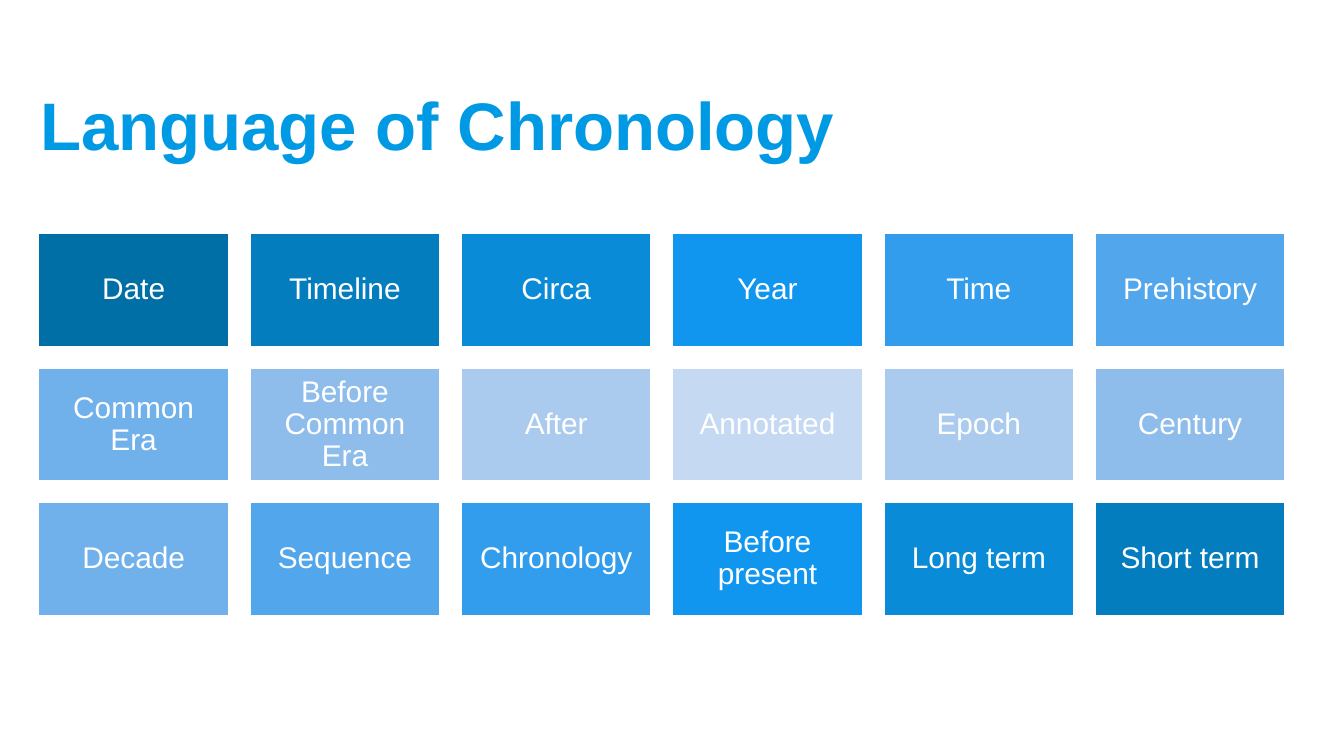
from pptx import Presentation
from pptx.dml.color import RGBColor
from pptx.enum.shapes import MSO_SHAPE
from pptx.enum.text import MSO_ANCHOR, PP_ALIGN
from pptx.util import Inches, Pt

RECTANGLE = MSO_SHAPE.RECTANGLE
MIDDLE = MSO_ANCHOR.MIDDLE
LEFT = PP_ALIGN.LEFT
CENTER = PP_ALIGN.CENTER

COLORS = {
    "title": "0099E3",
    "white": "FFFFFF",
    "shade_0": "006FA5",
    "shade_1": "047DBF",
    "shade_2": "098BD8",
    "shade_3": "1196EF",
    "shade_4": "329DEC",
    "shade_5": "52A6EB",
    "shade_6": "71B1EB",
    "shade_7": "8EBDEC",
    "shade_8": "AACBEE",
    "shade_9": "C5D9F2",
}
TERMS = [
    "Date", "Timeline", "Circa", "Year", "Time", "Prehistory",
    "Common Era", "Before Common Era", "After", "Annotated", "Epoch", "Century",
    "Decade", "Sequence", "Chronology", "Before present", "Long term", "Short term",
]
COLUMNS = 6
FIRST_LEFT, LAST_LEFT = 0.28, 8.14
PITCH = (LAST_LEFT - FIRST_LEFT) / (COLUMNS - 1)
TITLE_FONT = {"name": "Arial", "size": Pt(36), "bold": True}
TERM_FONT = {"name": "Arial", "size": Pt(16), "bold": False}
TITLE_PARAGRAPH = {"alignment": LEFT}
TERM_PARAGRAPH = {"alignment": CENTER, "line_spacing": 0.9}
TITLE_FRAME = {"word_wrap": True, "vertical_anchor": MIDDLE}
MARGINS = ("margin_left", "margin_top", "margin_right", "margin_bottom")
TERM_FRAME = {**TITLE_FRAME, **dict.fromkeys(MARGINS, Inches(0.07))}


def set_attributes(target, values):
    for name, value in values.items():
        setattr(target, name, value)


def write_text(shape, text, color, frame_format, paragraph_format, font_format):
    set_attributes(shape.text_frame, frame_format)
    paragraph = shape.text_frame.paragraphs[0]
    set_attributes(paragraph, paragraph_format)
    run = paragraph.add_run()
    run.text = text
    set_attributes(run.font, font_format)
    run.font.color.rgb = RGBColor.from_string(COLORS[color])


presentation = Presentation()
presentation.slide_width = Inches(10)
presentation.slide_height = Inches(10 * 9 / 16)
slide = presentation.slides.add_slide(presentation.slide_layouts[6])

title = slide.shapes.add_textbox(Inches(0.2), Inches(0.45), Inches(9.53), Inches(0.94))
write_text(title, "Language of Chronology", "title", TITLE_FRAME, TITLE_PARAGRAPH, TITLE_FONT)

for index, term in enumerate(TERMS):
    row, column = divmod(index, COLUMNS)
    tile = slide.shapes.add_shape(
        RECTANGLE,
        Inches(FIRST_LEFT + PITCH * column),
        Inches(1.73 + row),
        Inches(1.43),
        Inches(0.86),
    )
    tile.shadow.inherit = False
    shade = min(index, len(TERMS) - index)
    tile.fill.solid()
    tile.fill.fore_color.rgb = RGBColor.from_string(COLORS[f"shade_{shade}"])
    tile.line.color.rgb = RGBColor.from_string(COLORS["white"])
    tile.line.width = Pt(2)
    write_text(tile, term, "white", TERM_FRAME, TERM_PARAGRAPH, TERM_FONT)

presentation.save("out.pptx")
